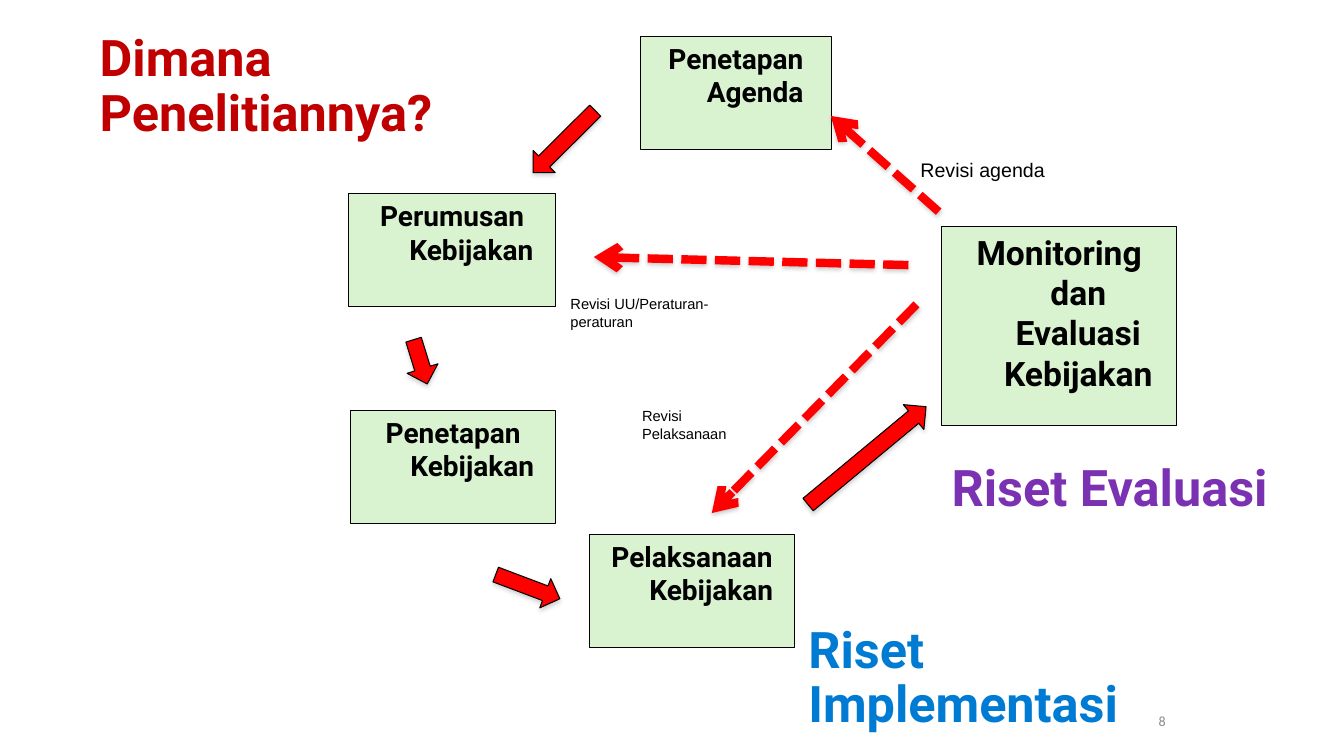
from lxml import etree
from pptx import Presentation
from pptx.dml.color import RGBColor
from pptx.enum.dml import MSO_LINE
from pptx.enum.shapes import MSO_CONNECTOR, MSO_SHAPE
from pptx.enum.text import MSO_ANCHOR, PP_ALIGN
from pptx.oxml.ns import qn
from pptx.util import Inches, Pt

RECTANGLE = MSO_SHAPE.RECTANGLE
DOWN_ARROW = MSO_SHAPE.DOWN_ARROW
STRAIGHT = MSO_CONNECTOR.STRAIGHT
SYSTEM_DASH = MSO_LINE.SQUARE_DOT
TOP, MIDDLE = MSO_ANCHOR.TOP, MSO_ANCHOR.MIDDLE
LEFT, CENTER, RIGHT = PP_ALIGN.LEFT, PP_ALIGN.CENTER, PP_ALIGN.RIGHT

COLORS = {
    "title": "C00000",
    "implementation": "007BD3",
    "evaluation": "7B32B2",
    "box": "D9F2D0",
    "arrow": "FF0000",
    "black": "000000",
    "page": "898989",
    "shadow": "808080",
}


def write(shape, text, font, size, color, bold=False, align=LEFT, anchor=TOP):
    """Fill a shape with text in one format."""
    frame = shape.text_frame
    frame.word_wrap = True
    frame.vertical_anchor = anchor
    frame.text = text
    for paragraph in frame.paragraphs:
        paragraph.alignment = align
        for run in paragraph.runs:
            run.font.name = font
            run.font.size = Pt(size)
            run.font.bold = bold
            run.font.color.rgb = RGBColor.from_string(COLORS[color])


def add_shadow(shape, alpha, distance):
    """Give a shape or connector a soft shadow straight below it."""
    effects = etree.SubElement(shape._element.spPr, qn("a:effectLst"))
    shadow = etree.SubElement(
        effects, qn("a:outerShdw"), blurRad=str(Pt(3.1)), dist=str(Pt(distance)),
        dir="5400000", rotWithShape="0")
    color = etree.SubElement(shadow, qn("a:srgbClr"), val=COLORS["shadow"])
    etree.SubElement(color, qn("a:alpha"), val=str(alpha * 1000))


presentation = Presentation()
presentation.slide_width = Inches(13.33)
presentation.slide_height = Inches(7.5)
slide = presentation.slides.add_slide(presentation.slide_layouts[6])
shapes = slide.shapes

# Policy steps
steps = [
    ("Monitoring dan Evaluasi Kebijakan", 9.34, 2.25, 2.33, 1.97, 24),
    ("Penetapan Agenda", 6.35, 0.36, 1.9, 1.12, 20),
    ("Perumusan Kebijakan", 3.46, 1.92, 2.05, 1.12, 20),
    ("Penetapan Kebijakan", 3.48, 4.07, 2.03, 1.12, 20),
    ("Pelaksanaan Kebijakan", 5.85, 5.3, 2.03, 1.12, 20),
]
for text, left, top, width, height, size in steps:
    box = shapes.add_shape(RECTANGLE, Inches(left), Inches(top), Inches(width), Inches(height))
    box.shadow.inherit = False
    box.fill.solid()
    box.fill.fore_color.rgb = RGBColor.from_string(COLORS["box"])
    box.line.color.rgb = RGBColor.from_string(COLORS["black"])
    box.line.width = Pt(0.75)
    write(box, text, "Roboto", size, "black", bold=True, align=CENTER)
    paragraph = box.text_frame.paragraphs[0]
    paragraph.space_before = Pt(size * 0.2)
    properties = paragraph._p.get_or_add_pPr()
    properties.set("marL", str(Inches(0.38)))
    properties.set("indent", str(Inches(-0.38)))

# Block arrows from step to step
block_arrows = [
    (5.44, 0.97, 0.31, 0.87, 45.1),
    (4.01, 3.36, 0.32, 0.46, 342.9),
    (5.08, 5.48, 0.31, 0.68, 290.7),
    (8.44, 3.76, 0.32, 1.52, 230.3),
]
for left, top, width, height, rotation in block_arrows:
    arrow = shapes.add_shape(DOWN_ARROW, Inches(left), Inches(top), Inches(width), Inches(height))
    arrow.rotation = rotation
    arrow.fill.solid()
    arrow.fill.fore_color.rgb = RGBColor.from_string(COLORS["arrow"])
    arrow.line.color.rgb = RGBColor.from_string(COLORS["black"])
    arrow.line.width = Pt(0.75)
    add_shadow(arrow, 35, 1.8)

# Dashed revision arrows
revision_arrows = [
    (9.31, 2.1, 8.24, 1.15),
    (9.01, 2.63, 5.89, 2.55),
    (9.09, 3.02, 7.06, 5.09),
]
for ends in revision_arrows:
    connector = shapes.add_connector(STRAIGHT, *[Inches(value) for value in ends])
    connector.line.color.rgb = RGBColor.from_string(COLORS["arrow"])
    connector.line.width = Pt(6)
    connector.line.dash_style = SYSTEM_DASH
    etree.SubElement(connector.line._get_or_add_ln(), qn("a:tailEnd"), type="arrow")
    add_shadow(connector, 38, 1.6)

# Revision labels
labels = [
    ("Revisi agenda", 9.03, 1.52, 0.34, 14),
    ("Revisi UU/Peraturan-peraturan", 5.56, 2.88, 0.45, 10.5),
    ("Revisi\nPelaksanaan", 6.27, 3.99, 0.45, 10.5),
]
for text, left, top, height, size in labels:
    label = shapes.add_textbox(Inches(left), Inches(top), Inches(2.05), Inches(height))
    write(label, text, "Arial", size, "black")

# Title and research headings
headings = [
    ("Dimana Penelitiannya?", 0.89, 0.26, "title"),
    ("Riset Implementasi", 7.92, 6.13, "implementation"),
    ("Riset Evaluasi", 9.34, 4.25, "evaluation"),
]
for text, left, top, color in headings:
    heading = shapes.add_textbox(Inches(left), Inches(top), Inches(3.58), Inches(1.22))
    write(heading, text, "Roboto", 36, color, bold=True, anchor=MIDDLE)
    heading.text_frame.paragraphs[0].line_spacing = 0.9

# Page number
page_number = shapes.add_textbox(Inches(9.33), Inches(6.95), Inches(2.33), Inches(0.4))
write(page_number, "8", "Calibri", 10, "page", align=RIGHT, anchor=MIDDLE)

presentation.save("out.pptx")
